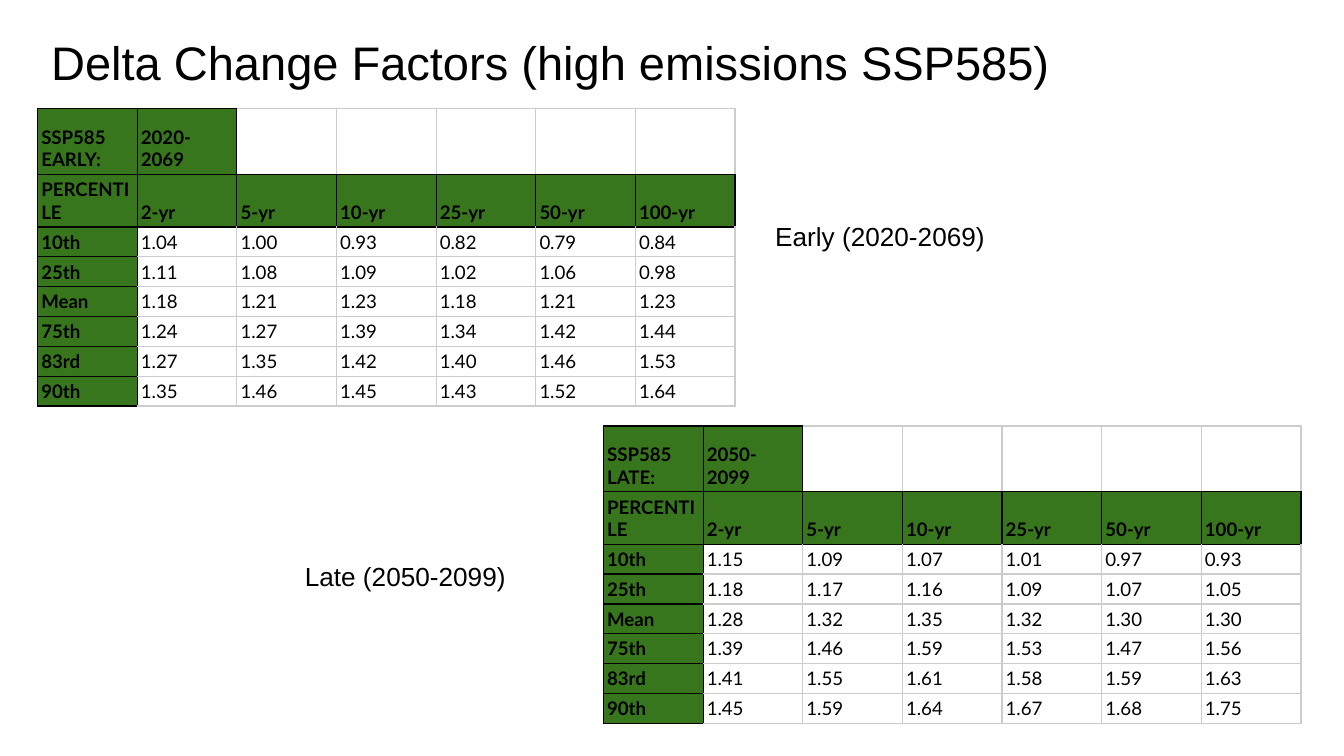
"""Build a slide with two tables of delta change factors."""
import dataclasses

import lxml.etree
import pptx
import pptx.dml.color
import pptx.enum.text
import pptx.oxml.ns
import pptx.slide
import pptx.table
import pptx.text.text
import pptx.util

Inches = pptx.util.Inches
BLACK, GRAY, GREEN = "000000", "CCCCCC", "38761D"
PERIODS = ["2-yr", "5-yr", "10-yr", "25-yr", "50-yr", "100-yr"]
PERCENTILES = ["10th", "25th", "Mean", "75th", "83rd", "90th"]
ROWS, COLS = len(PERCENTILES) + 2, len(PERIODS) + 1
COL_WIDTH = 5.19 / COLS
ROW_HEIGHTS = [0.49, 0.39] + [0.22] * len(PERCENTILES)
SIDES = {"lnL": (0, -1), "lnR": (0, 1), "lnT": (-1, 0), "lnB": (1, 0)}


@dataclasses.dataclass
class FactorTable:
    left: float
    top: float
    name: str
    years: str
    factors: list[str]
    label: str
    label_left: float
    label_top: float


TABLES = [
    FactorTable(0.28, 0.81, "SSP585 EARLY:", "2020-2069", [
        "1.04 1.00 0.93 0.82 0.79 0.84",
        "1.11 1.08 1.09 1.02 1.06 0.98",
        "1.18 1.21 1.23 1.18 1.21 1.23",
        "1.24 1.27 1.39 1.34 1.42 1.44",
        "1.27 1.35 1.42 1.40 1.46 1.53",
        "1.35 1.46 1.45 1.43 1.52 1.64",
    ], "Early (2020-2069)", 5.67, 1.59),
    FactorTable(4.49, 3.17, "SSP585 LATE:", "2050-2099", [
        "1.15 1.09 1.07 1.01 0.97 0.93",
        "1.18 1.17 1.16 1.09 1.07 1.05",
        "1.28 1.32 1.35 1.32 1.30 1.30",
        "1.39 1.46 1.59 1.53 1.47 1.56",
        "1.41 1.55 1.61 1.58 1.59 1.63",
        "1.45 1.59 1.64 1.67 1.68 1.75",
    ], "Late (2050-2099)", 2.17, 4.12),
]


def color(value: str) -> pptx.dml.color.RGBColor:
    return pptx.dml.color.RGBColor.from_string(value)


def style(p: pptx.text.text._Paragraph, size: float, font: str = "Arial",
          bold: bool = False) -> None:
    for r in p.runs:
        r.font.size = pptx.util.Pt(size)
        r.font.name = font
        r.font.bold = bold
        r.font.color.rgb = color(BLACK)


def is_header(row: int, col: int) -> bool:
    if not (0 <= row < ROWS and 0 <= col < COLS):
        return False
    return row == 1 or col == 0 or (row, col) == (0, 1)


def add_borders(cell: pptx.table._Cell, row: int, col: int) -> None:
    qn = pptx.oxml.ns.qn
    tc_pr = cell._tc.get_or_add_tcPr()
    for tag, (dr, dc) in SIDES.items():
        dark = is_header(row, col) or is_header(row + dr, col + dc)
        ln = lxml.etree.SubElement(tc_pr, qn(f"a:{tag}"), w=str(pptx.util.Pt(0.75)))
        fill = lxml.etree.SubElement(ln, qn("a:solidFill"))
        lxml.etree.SubElement(fill, qn("a:srgbClr"), val=BLACK if dark else GRAY)


def format_cell(cell: pptx.table._Cell, row: int, col: int, text: str) -> None:
    header = is_header(row, col)
    add_borders(cell, row, col)
    if header:
        cell.fill.solid()
        cell.fill.fore_color.rgb = color(GREEN)
    else:
        cell.fill.background()
    if text:
        cell.margin_left = cell.margin_right = pptx.util.Pt(2)
        cell.margin_top = cell.margin_bottom = pptx.util.Pt(2)
        cell.vertical_anchor = pptx.enum.text.MSO_ANCHOR.BOTTOM
        p = cell.text_frame.paragraphs[0]
        p.text = text
        p.alignment = pptx.enum.text.PP_ALIGN.JUSTIFY
        style(p, 10, "Lato", header)


def add_factor_table(s: pptx.slide.Slide, data: FactorTable) -> None:
    tbl = s.shapes.add_table(ROWS, COLS, Inches(data.left), Inches(data.top),
                             Inches(COL_WIDTH * COLS), Inches(sum(ROW_HEIGHTS))).table
    tbl.first_row = tbl.horz_banding = False
    for column in tbl.columns:
        column.width = Inches(COL_WIDTH)
    for tr, height in zip(tbl.rows, ROW_HEIGHTS):
        tr.height = Inches(height)
    rows = [[data.name, data.years] + [""] * (COLS - 2), ["PERCENTILE", *PERIODS]]
    rows += [[name, *line.split()] for name, line in zip(PERCENTILES, data.factors)]
    for i, values in enumerate(rows):
        for j, text in enumerate(values):
            format_cell(tbl.cell(i, j), i, j, text)


def add_label(s: pptx.slide.Slide, data: FactorTable) -> None:
    sp = s.shapes.add_textbox(Inches(data.label_left), Inches(data.label_top),
                              Inches(2.07), Inches(0.34))
    tf = sp.text_frame
    tf.word_wrap = True
    tf.auto_size = pptx.enum.text.MSO_AUTO_SIZE.SHAPE_TO_FIT_TEXT
    tf.text = data.label
    style(tf.paragraphs[0], 14)


def add_title(s: pptx.slide.Slide, text: str) -> None:
    sp = s.shapes.title
    sp.left, sp.top = Inches(0.28), Inches(0.15)
    sp.width, sp.height = Inches(9.32), Inches(0.55)
    tf = sp.text_frame
    tf.text = text
    tf.margin_left = tf.margin_right = tf.margin_top = tf.margin_bottom = Inches(0.1)
    tf.auto_size = pptx.enum.text.MSO_AUTO_SIZE.NONE
    tf.vertical_anchor = pptx.enum.text.MSO_ANCHOR.TOP
    p = tf.paragraphs[0]
    p.alignment = pptx.enum.text.PP_ALIGN.LEFT
    style(p, 25.2)


def main() -> None:
    prs = pptx.Presentation()
    prs.slide_width = Inches(10)
    prs.slide_height = Inches(10 * 9 / 16)
    s = prs.slides.add_slide(prs.slide_layouts[5])
    add_title(s, "Delta Change Factors (high emissions SSP585)")
    for data in TABLES:
        add_factor_table(s, data)
    for data in TABLES:
        add_label(s, data)
    prs.save("out.pptx")


if __name__ == "__main__":
    main()
